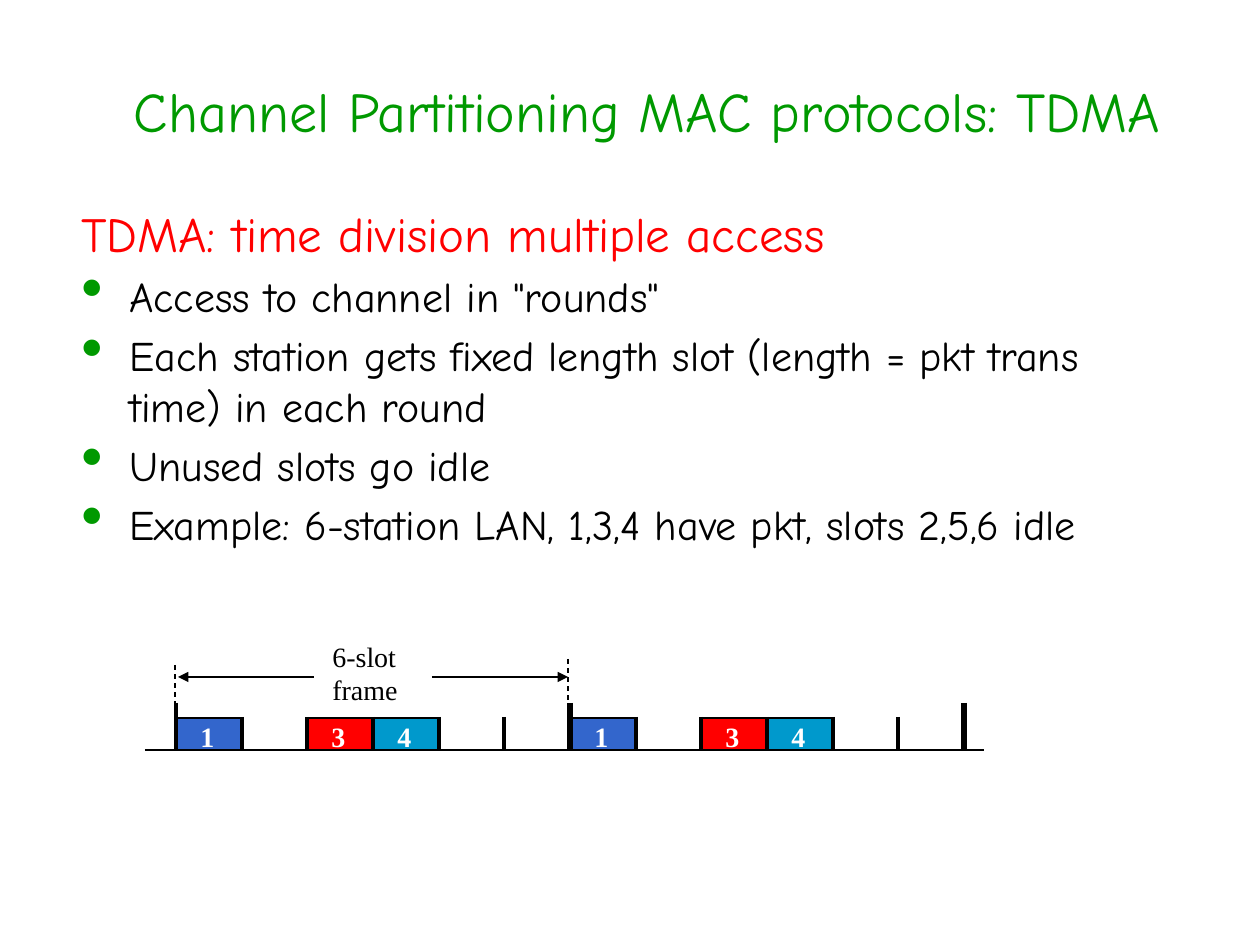
import pptx
import pptx.dml.color
import pptx.enum.dml
import pptx.enum.shapes
import pptx.enum.text
import pptx.oxml.ns
import pptx.util
from lxml import etree

PX_PER_INCH = 126
COLORS = {
    "green": "009900",
    "red": "FF0000",
    "blue": "3366CC",
    "cyan": "0099CC",
    "black": "000000",
    "white": "FFFFFF",
}
HEAD_FONT = "Comic Neue"
LABEL_FONT = "Times New Roman"


def px(length):
    return pptx.util.Emu(round(length * 914400 / PX_PER_INCH))


def color(name):
    return pptx.dml.color.RGBColor.from_string(COLORS[name])


def add_child(parent, tag, **attributes):
    return etree.SubElement(parent, pptx.oxml.ns.qn(tag), attributes)


class Painter:
    """Holds the page and the shared style, and draws one kind of element per method."""

    def __init__(self, page):
        self.page = page

    def text(self, left, top, width, height, lines, size, font, ink,
             bold=False, wrap=True, centered=False):
        """Add a text box and return its paragraphs."""
        box = self.page.shapes.add_textbox(px(left), px(top), px(width), px(height))
        frame = box.text_frame
        frame.word_wrap = wrap
        frame.text = "\n".join(lines)
        if centered:
            frame.vertical_anchor = pptx.enum.text.MSO_ANCHOR.MIDDLE
        for para in frame.paragraphs:
            if centered:
                para.alignment = pptx.enum.text.PP_ALIGN.CENTER
            para.font.size = pptx.util.Pt(size)
            para.font.name = font
            para.font.bold = bold
            para.font.color.rgb = color(ink)
        return frame.paragraphs

    def body(self, left, top, width, height, heading, points, indent=48):
        """Add a heading line followed by bulleted points."""
        box = self.page.shapes.add_textbox(px(left), px(top), px(width), px(height))
        frame = box.text_frame
        frame.word_wrap = True
        frame.text = "\n".join([heading, *points])
        for index, para in enumerate(frame.paragraphs):
            is_point = index > 0
            if is_point:
                self.bullet(para, indent)
                para.space_before = pptx.util.Pt(5)
            para.font.size = pptx.util.Pt(24 if is_point else 28)
            para.font.name = HEAD_FONT
            para.font.color.rgb = color("black" if is_point else "red")

    def bullet(self, para, indent):
        properties = para._p.get_or_add_pPr()
        properties.set("marL", str(px(indent)))
        properties.set("indent", str(-px(indent)))
        add_child(add_child(properties, "a:buClr"), "a:srgbClr", val=COLORS["green"])
        add_child(properties, "a:buSzPct", val="150000")
        add_child(properties, "a:buChar", char="•")

    def slot(self, left, top, width, height, fill):
        shape = self.page.shapes.add_shape(
            pptx.enum.shapes.MSO_SHAPE.RECTANGLE,
            px(left), px(top), px(width), px(height))
        shape.shadow.inherit = False
        shape.fill.solid()
        shape.fill.fore_color.rgb = color(fill)
        shape.line.color.rgb = color("black")
        shape.line.width = pptx.util.Pt(0.75)

    def line(self, x1, y1, x2, y2, weight=0.75, dashed=False, arrow=False):
        connector = self.page.shapes.add_connector(
            pptx.enum.shapes.MSO_CONNECTOR.STRAIGHT, px(x1), px(y1), px(x2), px(y2))
        connector.line.color.rgb = color("black")
        connector.line.width = pptx.util.Pt(weight)
        if dashed:
            connector.line.dash_style = pptx.enum.dml.MSO_LINE.DASH
        if arrow:
            add_child(connector.line._get_or_add_ln(), "a:tailEnd", type="triangle")
        add_child(connector._element.spPr, "a:effectLst")


def draw_timeline(painter):
    """Draw two frames of six slots, with stations 1, 3 and 4 sending."""
    start, frame_width, slots, base = 176, 394, 6, 750
    busy = {1: "blue", 3: "red", 4: "cyan"}

    def edge(index):
        return start + round(index * frame_width / slots)

    painter.line(145, base, 984, base)
    for frame in range(2):
        for station, fill in busy.items():
            left = edge(frame * slots + station - 1)
            painter.slot(left, base - 32, 66, 32, fill)
            painter.text(left + 12, base - 37, 43, 46, [str(station)], 16,
                         LABEL_FONT, "white", bold=True, wrap=False)
    for index in range(2 * slots + 1):
        starts_frame = index % slots == 0
        weight = 3 if starts_frame and index else 2.25
        painter.line(edge(index), base - (47 if starts_frame else 33),
                     edge(index), base, weight)

    painter.text(320, 633, 105, 81, ["6-slot", "frame"], 16,
                 LABEL_FONT, "black", wrap=False)
    end = start + frame_width
    painter.line(432, 677, end - 2, 677, arrow=True)
    painter.line(314, 677, start + 2, 677, arrow=True)
    painter.line(start - 1, 665, start - 1, 707, dashed=True)
    painter.line(end - 2, 659, end - 2, 701, dashed=True)


def main():
    deck = pptx.Presentation()
    deck.slide_width = px(1260)
    deck.slide_height = px(945)
    painter = Painter(deck.slides.add_slide(deck.slide_layouts[6]))
    painter.text(53, 32, 1189, 157, ["Channel Partitioning MAC protocols: TDMA"],
                 32, HEAD_FONT, "green", centered=True)
    painter.body(69, 197, 1071, 403, "TDMA: time division multiple access", [
        'Access to channel in "rounds"',
        "Each station gets fixed length slot (length = pkt trans time) in each round",
        "Unused slots go idle",
        "Example: 6-station LAN, 1,3,4 have pkt, slots 2,5,6 idle",
    ])
    draw_timeline(painter)
    deck.save("out.pptx")


if __name__ == "__main__":
    main()
